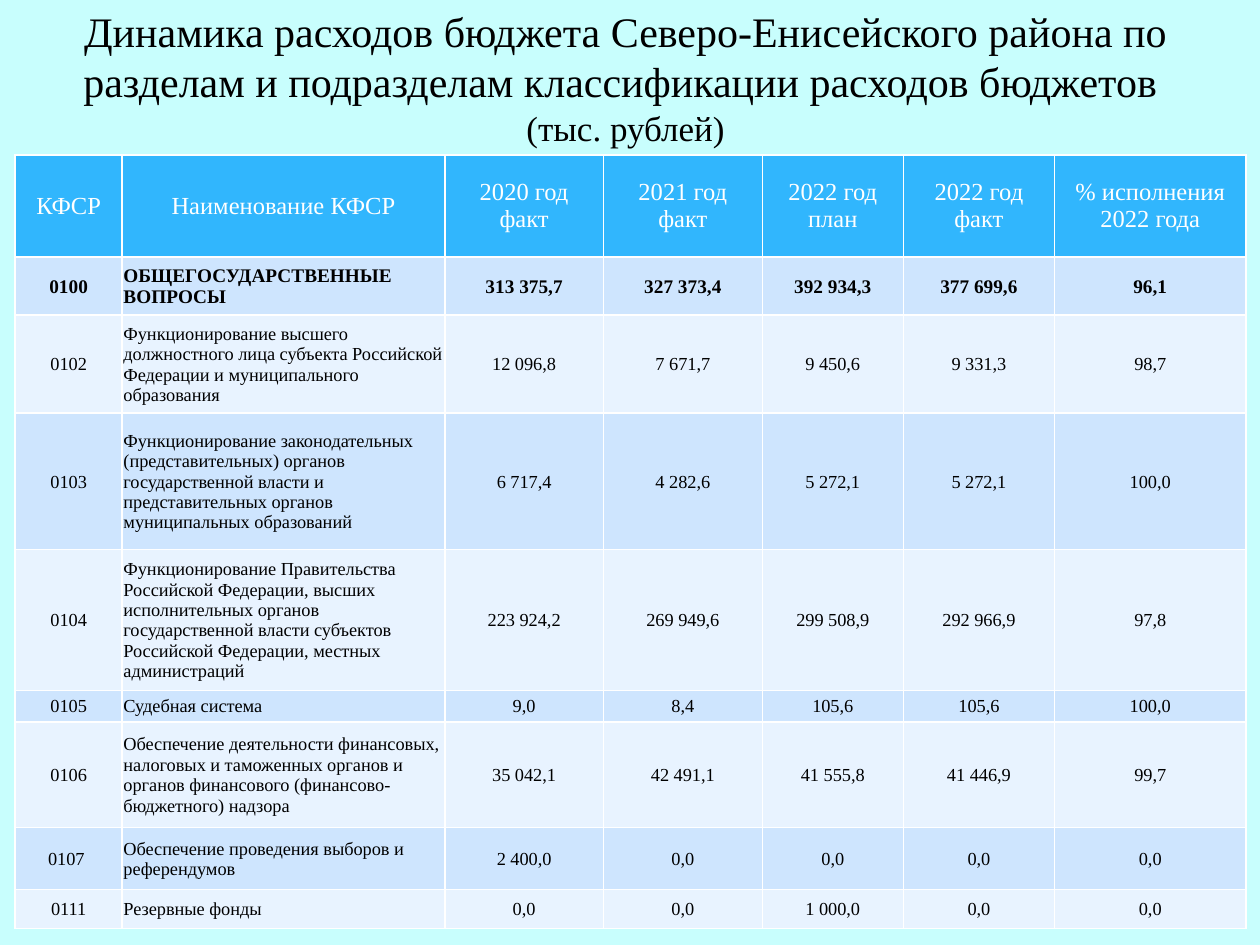
"""Build the slide on district budget spending by section and subsection."""
from pptx import Presentation
from pptx.dml.color import RGBColor
from pptx.enum.text import MSO_ANCHOR as Anchor, PP_ALIGN as Align
from pptx.util import Inches, Pt


def color(hex_code):
    return RGBColor.from_string(hex_code)


def add_run(paragraph, text, size, hex_code, bold=False):
    run = paragraph.add_run()
    run.text = text
    font_format = {"name": "Times New Roman", "size": Pt(size), "bold": bold}
    for key, value in font_format.items():
        setattr(run.font, key, value)
    run.font.color.rgb = color(hex_code)


headings = ["КФСР", "Наименование КФСР", "2020 год факт", "2021 год факт",
            "2022 год план", "2022 год факт", "% исполнения\n2022 года"]
expenses = [
    ["0100", "ОБЩЕГОСУДАРСТВЕННЫЕ ВОПРОСЫ",
     "313 375,7", "327 373,4", "392 934,3", "377 699,6", "96,1"],
    ["0102", "Функционирование высшего должностного лица субъекта Российской "
     "Федерации и муниципального образования",
     "12 096,8", "7 671,7", "9 450,6", "9 331,3", "98,7"],
    ["0103", "Функционирование законодательных (представительных) органов "
     "государственной власти и представительных органов муниципальных образований",
     "6 717,4", "4 282,6", "5 272,1", "5 272,1", "100,0"],
    ["0104", "Функционирование Правительства Российской Федерации, высших "
     "исполнительных органов государственной власти субъектов Российской "
     "Федерации, местных администраций",
     "223 924,2", "269 949,6", "299 508,9", "292 966,9", "97,8"],
    ["0105", "Судебная система", "9,0", "8,4", "105,6", "105,6", "100,0"],
    ["0106", "Обеспечение деятельности финансовых, налоговых и таможенных органов "
     "и органов финансового (финансово-бюджетного) надзора",
     "35 042,1", "42 491,1", "41 555,8", "41 446,9", "99,7"],
    ["0107 ", "Обеспечение проведения выборов и референдумов",
     "2 400,0", "0,0", "0,0", "0,0", "0,0"],
    ["0111", "Резервные фонды", "0,0", "0,0", "1 000,0", "0,0", "0,0"],
]
column_widths = [0.85, 2.56, 1.26, 1.26, 1.12, 1.2, 1.52]
row_heights = [0.81, 0.46, 0.78, 1.08, 1.12, 0.25, 0.84, 0.49, 0.31]
body_margins = {"margin_left": Inches(0.01), "margin_right": Inches(0.01),
                "margin_top": Inches(0.01), "margin_bottom": 0}

deck = Presentation()
deck.slide_width, deck.slide_height = Inches(10), Inches(7.5)
slide = deck.slides.add_slide(deck.slide_layouts[6])
slide.background.fill.solid()
slide.background.fill.fore_color.rgb = color("C8FEFD")

title = slide.shapes.add_textbox(Inches(0.12), Inches(0.05), Inches(9.69), Inches(1.12))
title.text_frame.word_wrap = True
title.text_frame.vertical_anchor = Anchor.MIDDLE
title_line = title.text_frame.paragraphs[0]
title_line.alignment = Align.CENTER
add_run(title_line, "Динамика расходов бюджета Северо-Енисейского района по разделам "
        "и подразделам классификации расходов бюджетов ", 24, "000000")
title_line.add_line_break()
add_run(title_line, "(тыс. рублей)", 20, "000000")

budget = slide.shapes.add_table(
    len(row_heights), len(column_widths), Inches(0.12), Inches(1.23),
    Inches(sum(column_widths)), Inches(sum(row_heights))).table
for column, width in zip(budget.columns, column_widths):
    column.width = Inches(width)
for row, height in zip(budget.rows, row_heights):
    row.height = Inches(height)

for r, values in enumerate([headings] + expenses):
    is_heading, is_total = r == 0, r == 1
    fill = "31B6FD" if is_heading else ("E8F3FF", "CEE5FE")[r % 2]
    size = 14 if is_heading else 11 if is_total else 10.5
    text_color = "FFFFFF" if is_heading else "000000"
    for c, value in enumerate(values):
        cell = budget.cell(r, c)
        cell.fill.solid()
        cell.fill.fore_color.rgb = color(fill)
        cell.vertical_anchor = Anchor.MIDDLE
        if not is_heading:
            for key, margin in body_margins.items():
                setattr(cell, key, margin)
        for i, line in enumerate(value.split("\n")):
            paragraph = cell.text_frame.add_paragraph() if i else cell.text_frame.paragraphs[0]
            paragraph.alignment = Align.LEFT if c == 1 and not is_heading else Align.CENTER
            add_run(paragraph, line, size, text_color, is_total)

deck.save("out.pptx")
